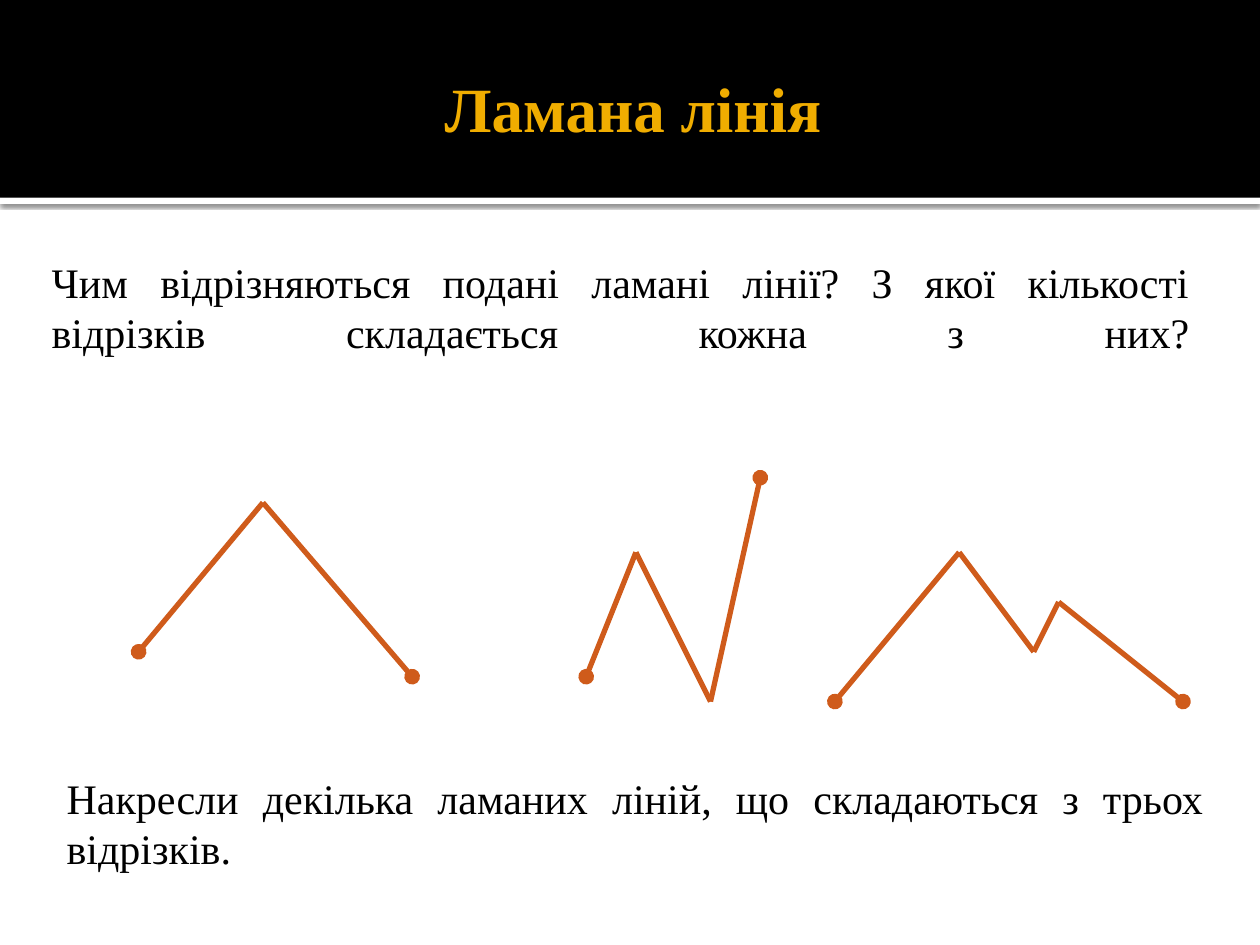
from dataclasses import dataclass
from itertools import pairwise

from lxml.etree import SubElement
from pptx import Presentation
from pptx.dml.color import RGBColor
from pptx.enum.shapes import MSO_CONNECTOR as Connector, MSO_SHAPE as Shape
from pptx.enum.text import MSO_ANCHOR as Anchor, PP_ALIGN as Align
from pptx.oxml.ns import qn
from pptx.util import Pt


@dataclass(frozen=True)
class Theme:
    font: str = "Times New Roman"
    heading_size: int = 36
    body_size: int = 24
    line_width: int = 3
    text: str = "000000"
    accent: str = "F0AD00"
    band: str = "000000"
    rule: str = "FFFFFF"
    stroke: str = "CF5B1B"


def write(frame, text, *, font, size, color, bold=False, align=Align.JUSTIFY,
          anchor=Anchor.MIDDLE, right=7.2, end_break=False):
    """Fill a text frame with one formatted paragraph."""
    frame.word_wrap = True
    frame.vertical_anchor = anchor
    frame.margin_left, frame.margin_right = Pt(7.2), Pt(right)
    frame.margin_top = frame.margin_bottom = Pt(3.6)
    para = frame.paragraphs[0]
    para.alignment = align
    span = para.add_run()
    span.text = text
    span.font.name, span.font.size, span.font.bold = font, Pt(size), bold
    span.font.color.rgb = RGBColor.from_string(color)
    if end_break:  # the closing break stretches the last line to full width
        para.add_line_break()
        line_break = para._p.find(qn("a:br"))
        SubElement(line_break, qn("a:rPr"), sz=str(size * 100))
        SubElement(para._p, qn("a:endParaRPr"), sz=str(size * 100))


class SlideBuilder:
    def __init__(self, slide, theme):
        self.slide, self.theme = slide, theme

    def band(self, top, height, color):
        box = self.slide.shapes.add_shape(Shape.RECTANGLE, 0, Pt(top), Pt(720), Pt(height))
        box.shadow.inherit = False
        box.fill.solid()
        box.fill.fore_color.rgb = RGBColor.from_string(color)
        box.line.fill.background()
        return box

    def drop_shadow(self, box, blur, distance, opacity):
        effects = box._element.spPr.find(qn("a:effectLst"))
        shadow = SubElement(effects, qn("a:outerShdw"), blurRad=str(Pt(blur)),
                            dist=str(Pt(distance)), dir="5400000", algn="tl", rotWithShape="0")
        color = SubElement(shadow, qn("a:srgbClr"), val="000000")
        SubElement(color, qn("a:alpha"), val=str(opacity * 1000))

    def title(self, text, left, top, width, height, **style):
        box = self.slide.shapes.title
        box.left, box.top, box.width, box.height = map(Pt, (left, top, width, height))
        write(box.text_frame, text, font=self.theme.font, **style)

    def text(self, text, left, top, width, height, **style):
        box = self.slide.shapes.add_textbox(*map(Pt, (left, top, width, height)))
        write(box.text_frame, text, font=self.theme.font, **style)

    def polyline(self, group, points):
        segments = list(pairwise(points))
        for index, (start, end) in enumerate(segments):
            line = group.shapes.add_connector(Connector.STRAIGHT, *map(Pt, start + end))
            line.line.width = Pt(self.theme.line_width)
            line.line.color.rgb = RGBColor.from_string(self.theme.stroke)
            # Dots mark only the two free ends
            if index == 0:
                SubElement(line.line._get_or_add_ln(), qn("a:headEnd"), type="oval")
            if index == len(segments) - 1:
                SubElement(line.line._get_or_add_ln(), qn("a:tailEnd"), type="oval")
            SubElement(line._element.spPr, qn("a:effectLst"))


# Broken lines as (column, row) nodes of a square grid
GRID_LEFT, GRID_TOP, CELL = 79.2, 273, 14.21
BROKEN_LINES = [
    [(0, 7), (5, 1), (11, 8)],
    [(18, 8), (20, 3), (23, 9), (25, 0)],
    [(28, 9), (33, 3), (36, 7), (37, 5), (42, 9)],
]


def main():
    theme = Theme()
    deck = Presentation()
    deck.slide_width, deck.slide_height = Pt(720), Pt(540)
    page = deck.slides.add_slide(deck.slide_layouts[5])
    builder = SlideBuilder(page, theme)

    # Header band with a shadowed white rule below it
    rule = builder.band(113, 3.6, theme.rule)
    builder.drop_shadow(rule, blur=2.5, distance=0.8, opacity=60)
    builder.band(0, 113, theme.band)

    # Question
    builder.title("Чим відрізняються подані ламані лінії? З якої кількості "
                  "відрізків складається кожна з них?", 22.3, 131.8, 661, 116,
                  size=theme.body_size, color=theme.text, right=3.6, end_break=True)

    # Broken lines
    group = page.shapes.add_group_shape()
    for nodes in BROKEN_LINES:
        builder.polyline(group, [(GRID_LEFT + column * CELL, GRID_TOP + row * CELL)
                                 for column, row in nodes])

    # Task and heading
    builder.text("Накресли декілька ламаних ліній, що складаються з трьох відрізків.",
                 31, 417.6, 664, 85, size=theme.body_size, color=theme.text,
                 anchor=Anchor.BOTTOM)
    builder.text("Ламана лінія", 36, 12.2, 648, 98.6, size=theme.heading_size,
                 color=theme.accent, bold=True, align=Align.CENTER, right=3.6)

    deck.save("out.pptx")


if __name__ == "__main__":
    main()
